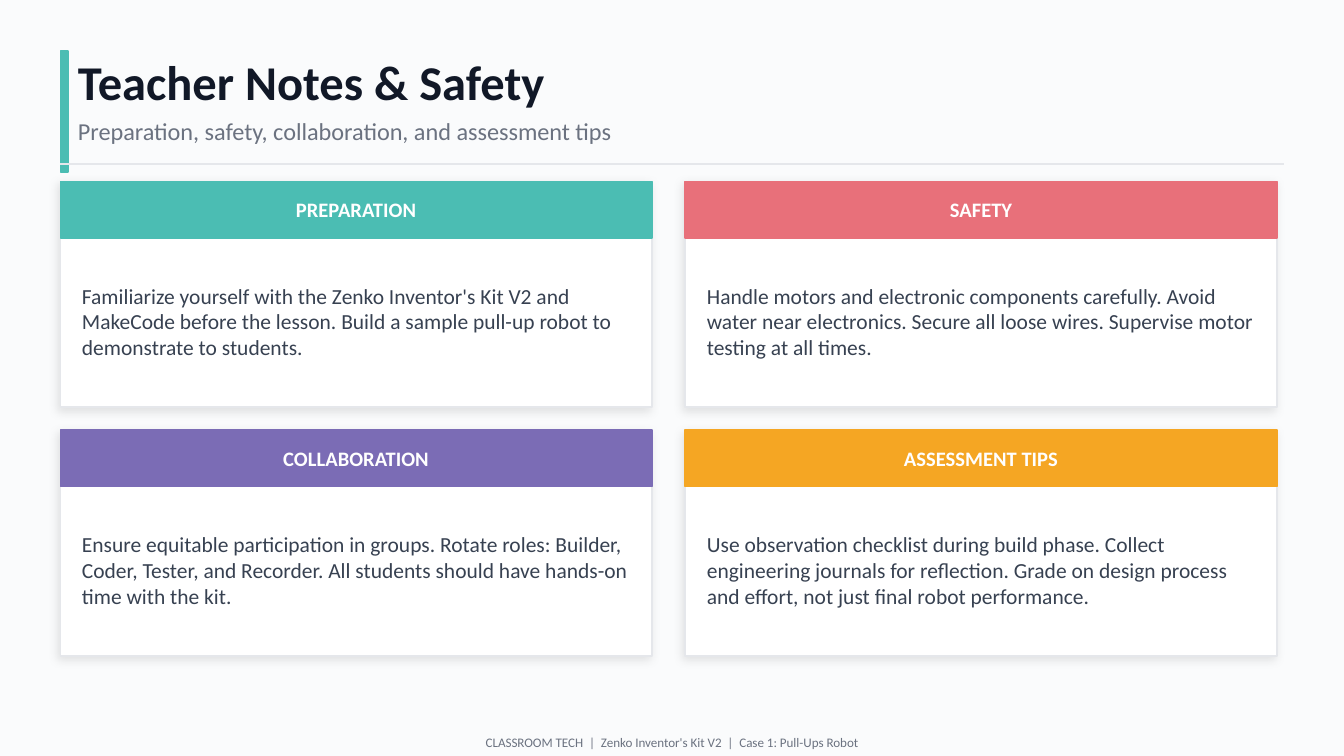
from lxml.etree import SubElement
from pptx import Presentation
from pptx.dml.color import RGBColor
from pptx.enum.shapes import MSO_CONNECTOR, MSO_SHAPE
from pptx.enum.text import MSO_ANCHOR, MSO_AUTO_SIZE, PP_ALIGN
from pptx.oxml.ns import qn
from pptx.util import Pt

COLORS = {
    "background": "FAFBFC", "title": "111827", "muted": "6B7280",
    "body": "374151", "border": "E5E7EB", "white": "FFFFFF",
    "teal": "4BBDB3", "coral": "E8707A", "purple": "7B6CB5", "amber": "F5A623",
}
FONT = "Calibri"
LEFT, CARD_TOP = 32.4, 97.2
CARD_WIDTH, CARD_HEIGHT, HEADER_HEIGHT = 316.8, 121, 30.24
COLUMN_STEP, ROW_STEP = 334.8, 133.2

CARDS = [
    ("PREPARATION", "teal",
     "Familiarize yourself with the Zenko Inventor's Kit V2 and MakeCode before "
     "the lesson. Build a sample pull-up robot to demonstrate to students."),
    ("SAFETY", "coral",
     "Handle motors and electronic components carefully. Avoid water near "
     "electronics. Secure all loose wires. Supervise motor testing at all times."),
    ("COLLABORATION", "purple",
     "Ensure equitable participation in groups. Rotate roles: Builder, Coder, "
     "Tester, and Recorder. All students should have hands-on time with the kit."),
    ("ASSESSMENT TIPS", "amber",
     "Use observation checklist during build phase. Collect engineering journals "
     "for reflection. Grade on design process and effort, not just final robot "
     "performance."),
]


def rgb(name):
    return RGBColor.from_string(COLORS[name])


def write_text(shape, text, size, color, bold=False, align=PP_ALIGN.LEFT):
    frame = shape.text_frame
    frame.word_wrap = True
    frame.auto_size = MSO_AUTO_SIZE.NONE
    frame.vertical_anchor = MSO_ANCHOR.MIDDLE
    frame.margin_left = frame.margin_right = 0
    frame.margin_top = frame.margin_bottom = 0
    paragraph = frame.paragraphs[0]
    paragraph.text = text
    paragraph.alignment = align
    font = paragraph.font
    font.name, font.size, font.bold = FONT, Pt(size), bold
    font.color.rgb = rgb(color)


def add_text(slide, left, top, width, height, *text_style, **options):
    box = slide.shapes.add_textbox(Pt(left), Pt(top), Pt(width), Pt(height))
    write_text(box, *text_style, **options)


def add_rectangle(slide, left, top, width, height, fill, line):
    shape = slide.shapes.add_shape(
        MSO_SHAPE.RECTANGLE, Pt(left), Pt(top), Pt(width), Pt(height))
    shape.fill.solid()
    shape.fill.fore_color.rgb = rgb(fill)
    shape.line.color.rgb = rgb(line)
    shape.line.width = Pt(1)
    shape.shadow.inherit = False
    return shape


def add_soft_shadow(shape):
    effects = shape._element.spPr.find(qn("a:effectLst"))
    shadow = SubElement(effects, qn("a:outerShdw"), blurRad=str(Pt(5)),
                        dist=str(Pt(2)), dir=str(135 * 60000),
                        algn="bl", rotWithShape="0")
    color = SubElement(shadow, qn("a:srgbClr"), val="000000")
    SubElement(color, qn("a:alpha"), val="10000")


def add_divider(slide, left, right, y):
    line = slide.shapes.add_connector(
        MSO_CONNECTOR.STRAIGHT, Pt(left), Pt(y), Pt(right), Pt(y))
    line.line.color.rgb = rgb("border")
    line.line.width = Pt(1)
    SubElement(line._element.spPr, qn("a:effectLst"))


def set_title(slide, text):
    title = slide.shapes.title
    title.left, title.top = Pt(41.76), Pt(25.2)
    title.width, title.height = Pt(612), Pt(36)
    write_text(title, text, 26, "title", bold=True)


def add_card(slide, left, top, heading, color, body):
    card = add_rectangle(slide, left, top, CARD_WIDTH, CARD_HEIGHT,
                         "white", "border")
    add_soft_shadow(card)
    header = add_rectangle(slide, left, top, CARD_WIDTH, HEADER_HEIGHT,
                           color, color)
    write_text(header, heading, 11, "white", bold=True, align=PP_ALIGN.CENTER)
    add_text(slide, left + 11.5, top + 37.44, 295.2, 74.88, body, 11.5, "body")


def main():
    presentation = Presentation()
    presentation.slide_width, presentation.slide_height = Pt(720), Pt(405)
    slide = presentation.slides.add_slide(presentation.slide_layouts[5])
    slide.background.fill.solid()
    slide.background.fill.fore_color.rgb = rgb("background")

    add_rectangle(slide, LEFT, 27.36, 4.32, 64.8, "teal", "teal")
    set_title(slide, "Teacher Notes & Safety")
    add_text(slide, 41.76, 59.04, 612, 21.6,
             "Preparation, safety, collaboration, and assessment tips", 13, "muted")
    add_divider(slide, LEFT, 720 - LEFT, 87.84)

    for index, card in enumerate(CARDS):
        row, column = divmod(index, 2)
        add_card(slide, LEFT + column * COLUMN_STEP, CARD_TOP + row * ROW_STEP, *card)

    add_text(slide, 0, 390.24, 720, 14.4,
             "CLASSROOM TECH  |  Zenko Inventor's Kit V2  |  Case 1: Pull-Ups Robot",
             7, "muted", align=PP_ALIGN.CENTER)
    presentation.save("out.pptx")


if __name__ == "__main__":
    main()
